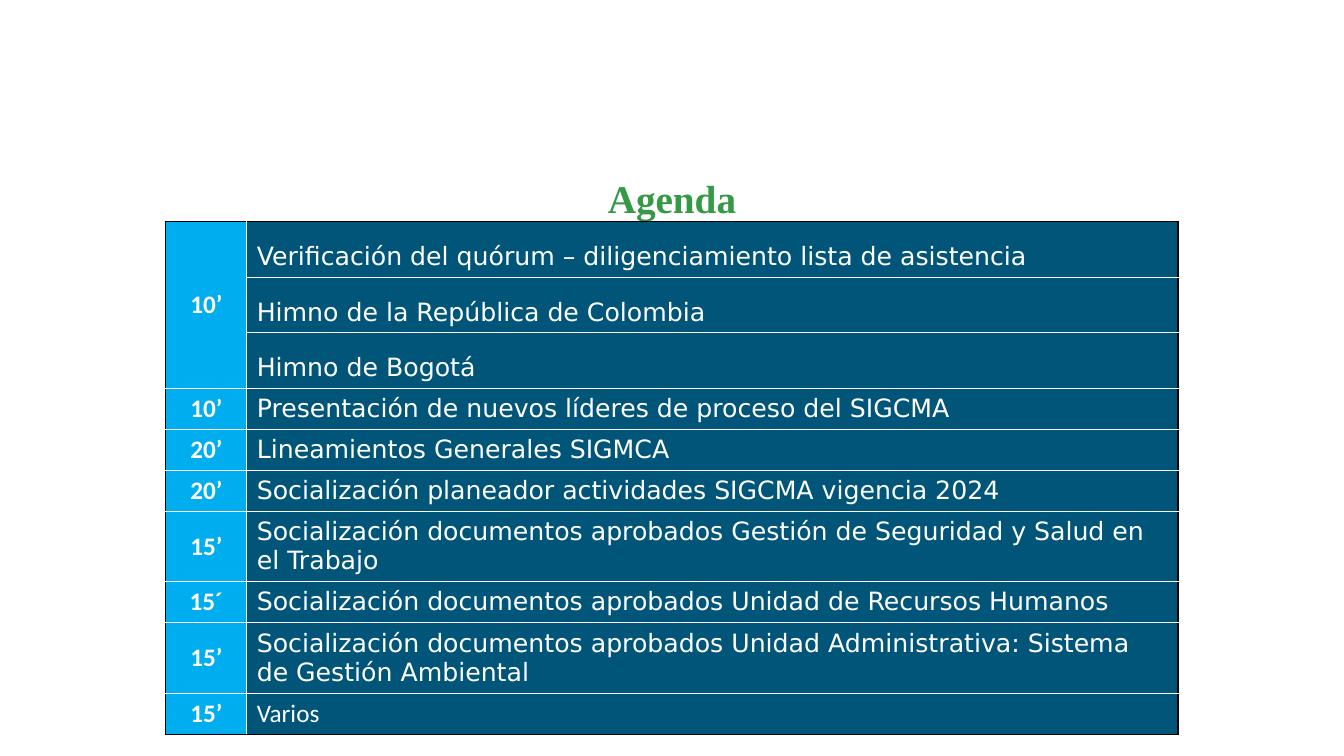
import dataclasses

import lxml.etree
import pptx
import pptx.dml.color
import pptx.enum.text
import pptx.oxml.ns
import pptx.util

EMU_PER_PX = 9525
ALIGN = pptx.enum.text.PP_ALIGN
MIDDLE = pptx.enum.text.MSO_ANCHOR.MIDDLE


@dataclasses.dataclass(frozen=True)
class Theme:
    """Colours, fonts and type sizes of the slide."""
    title_color: str = "359946"
    time_fill: str = "00ADEF"
    topic_fill: str = "015579"
    light: str = "FFFFFF"
    dark: str = "000000"
    title_font: str = "Times New Roman"
    time_font: str = "Calibri"
    topic_font: str = "DejaVu Sans"
    title_size: int = 28
    body_size: int = 18
    border_width: int = 1


THEME = Theme()
COLUMN_WIDTHS = (77, 887)
OPENING, SINGLE, DOUBLE = 53, 39, 67
OPENING_ROWS = 3
AGENDA = (
    ("10’", "Verificación del quórum – diligenciamiento lista de asistencia", OPENING),
    ("", "Himno de la República de Colombia", OPENING),
    ("", "Himno de Bogotá", OPENING),
    ("10’", "Presentación de nuevos líderes de proceso del SIGCMA", SINGLE),
    ("20’", "Lineamientos Generales SIGMCA", SINGLE),
    ("20’", "Socialización planeador actividades SIGCMA vigencia 2024", SINGLE),
    ("15’", "Socialización documentos aprobados Gestión de Seguridad y Salud en el Trabajo", DOUBLE),
    ("15´", "Socialización documentos aprobados Unidad de Recursos Humanos", SINGLE),
    ("15’", "Socialización documentos aprobados Unidad Administrativa: Sistema de Gestión Ambiental", DOUBLE),
    ("15’", "Varios", SINGLE),
)


def px(length):
    """Turn px into EMU."""
    return pptx.util.Emu(length * EMU_PER_PX)


def rgb(color):
    """Turn a hex string into a colour."""
    return pptx.dml.color.RGBColor.from_string(color)


def style_paragraph(paragraph, font_name, size, color, bold, alignment):
    """Set the font and alignment of a paragraph."""
    paragraph.alignment = alignment
    paragraph.font.name = font_name
    paragraph.font.size = pptx.util.Pt(size)
    paragraph.font.color.rgb = rgb(color)
    paragraph.font.bold = bold


def set_borders(cell, colors):
    """Draw the left, right, top and bottom borders of a cell."""
    properties = cell._tc.get_or_add_tcPr()
    qn = pptx.oxml.ns.qn
    for index, (side, color) in enumerate(zip("LRTB", colors)):
        line = lxml.etree.Element(qn(f"a:ln{side}"), w=str(pptx.util.Pt(THEME.border_width)))
        fill = lxml.etree.SubElement(line, qn("a:solidFill"))
        lxml.etree.SubElement(fill, qn("a:srgbClr"), val=color)
        properties.insert(index, line)


def fill_cell(cell, text, fill, font_name, bold, alignment):
    """Write and colour one agenda cell."""
    cell.fill.solid()
    cell.fill.fore_color.rgb = rgb(fill)
    cell.vertical_anchor = MIDDLE
    cell.text = text
    paragraph = cell.text_frame.paragraphs[0]
    style_paragraph(paragraph, font_name, THEME.body_size, THEME.light, bold, alignment)
    return paragraph


def add_title(slide, left, top, width, height):
    """Place the heading in its box."""
    frame = slide.shapes.add_textbox(px(left), px(top), px(width), px(height)).text_frame
    frame.word_wrap = True
    frame.margin_left = frame.margin_right = frame.margin_bottom = 0
    frame.margin_top = px(1)
    frame.text = "Agenda"
    style_paragraph(frame.paragraphs[0], THEME.title_font, THEME.title_size,
                    THEME.title_color, True, ALIGN.CENTER)


def add_agenda(slide, left, top):
    """Place the agenda table with its top left corner at the given point."""
    height = sum(row_height for _, _, row_height in AGENDA)
    table = slide.shapes.add_table(len(AGENDA), len(COLUMN_WIDTHS), px(left), px(top),
                                   px(sum(COLUMN_WIDTHS)), px(height)).table
    for column, width in zip(table.columns, COLUMN_WIDTHS):
        column.width = px(width)
    last = len(AGENDA) - 1
    for row, (time, topic, row_height) in enumerate(AGENDA):
        table.rows[row].height = px(row_height)
        time_cell, topic_cell = table.cell(row, 0), table.cell(row, 1)
        opening = row < OPENING_ROWS
        fill_cell(time_cell, time, THEME.time_fill, THEME.time_font, True, ALIGN.CENTER)
        topic_font = THEME.time_font if row == last else THEME.topic_font
        paragraph = fill_cell(topic_cell, topic, THEME.topic_fill, topic_font, False,
                              ALIGN.JUSTIFY if opening else ALIGN.LEFT)
        if opening:
            paragraph.line_spacing = 1.5
        upper = THEME.dark if row == 0 else THEME.light
        lower = THEME.dark if row == last else THEME.light
        set_borders(time_cell, (THEME.dark, THEME.light, upper, lower))
        set_borders(topic_cell, (THEME.light, THEME.dark, upper, lower))
    table.cell(0, 0).merge(table.cell(OPENING_ROWS - 1, 0))


def main():
    """Build and save the agenda slide."""
    presentation = pptx.Presentation()
    presentation.slide_width, presentation.slide_height = px(1280), px(720)
    slide = presentation.slides.add_slide(presentation.slide_layouts[6])
    add_title(slide, 273, 165, 734, 46)
    add_agenda(slide, 158, 211)
    presentation.save("out.pptx")


if __name__ == "__main__":
    main()
